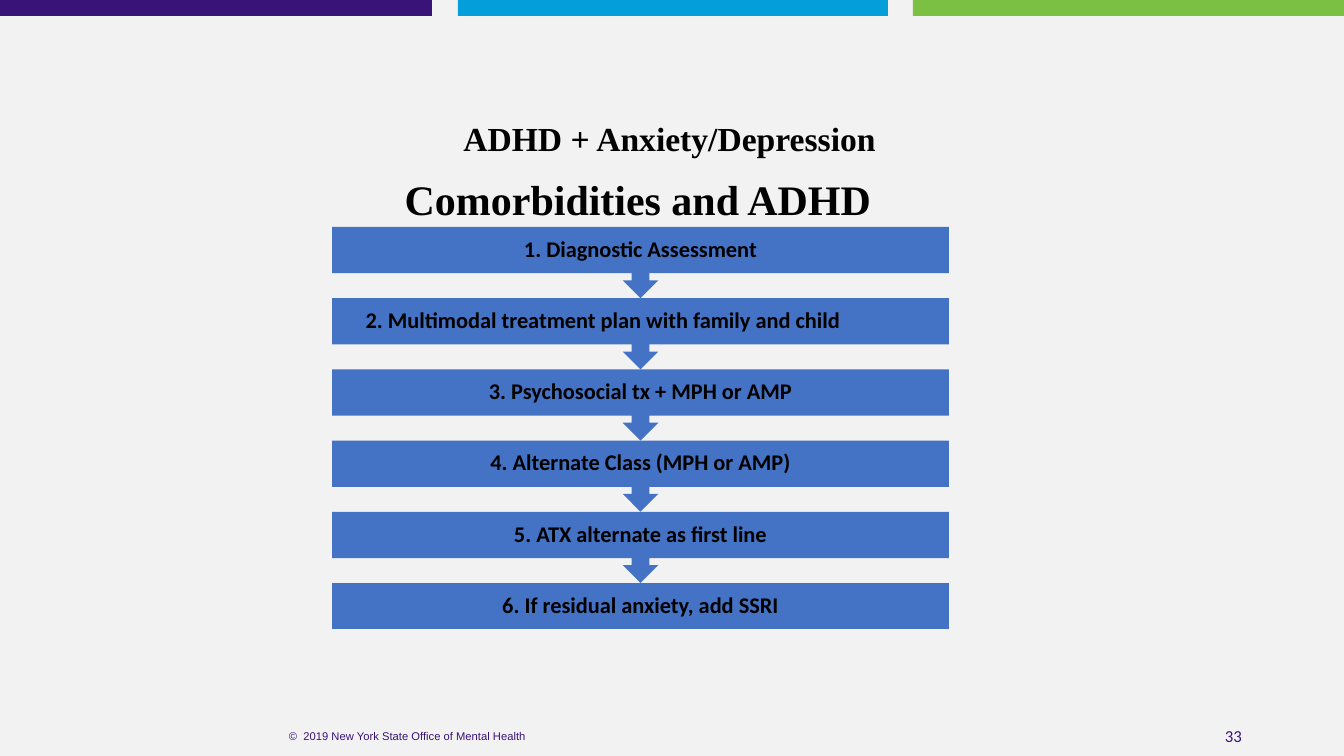
"""Build the ADHD with anxiety or depression treatment steps slide."""
import pptx
import pptx.dml.color
import pptx.enum.shapes
import pptx.enum.text
import pptx.util

STEPS = [
    "1. Diagnostic Assessment",
    "2. Multimodal treatment plan with family and child",
    "3. Psychosocial tx + MPH or AMP",
    "4. Alternate Class (MPH or AMP)",
    "5. ATX alternate as first line",
    "6. If residual anxiety, add SSRI",
]
TITLE = "ADHD + Anxiety/Depression"
HEAD = "Comorbidities and ADHD"
FOOT = "©  2019 New York State Office of Mental Health"
PAGE = "33"

THEME = {
    "back": "F2F2F2",
    "step": "4472C4",
    "bars": ["391378", "049FDA", "7BBF43"],
    "title": {"name": "Times New Roman", "size": 24, "bold": True, "color": "000000"},
    "head": {"name": "Times New Roman", "size": 30, "bold": True, "color": "000000"},
    "body": {"name": "Calibri", "size": 16, "bold": True, "color": "000000"},
    "foot": {"name": "Arial", "size": 8, "bold": False, "color": "391378"},
    "page": {"name": "Calibri", "size": 12, "bold": False, "color": "391378"},
}
BARS = [(0, 432), (458, 430), (913, 431)]
BAR_H = 16
LEFT, WIDE, FIRST, LAST, BOX_H = 332, 617, 227, 583, 46
PAD = (12, 12, 12, 12)
SHIFTS = {1: (12, 12, 87, 12)}

KIND = pptx.enum.shapes.MSO_SHAPE
ALIGN = pptx.enum.text.PP_ALIGN
ANCHOR = pptx.enum.text.MSO_ANCHOR


def px(n):
    return round(n * 914400 / 100.8)


def rgb(code):
    return pptx.dml.color.RGBColor.from_string(code)


def write(shape, text, style, align=ALIGN.CENTER, anchor=ANCHOR.MIDDLE,
          pad=(10, 5, 10, 5), lead=1.0):
    frame = shape.text_frame
    frame.text = text
    sides = ("margin_left", "margin_top", "margin_right", "margin_bottom")
    look = dict(zip(sides, map(px, pad)), word_wrap=True, vertical_anchor=anchor,
                auto_size=pptx.enum.text.MSO_AUTO_SIZE.NONE)
    for key, value in look.items():
        setattr(frame, key, value)
    line = frame.paragraphs[0]
    line.alignment, line.line_spacing = align, lead
    font = line.runs[0].font
    for key, value in {**THEME[style], "size": pptx.util.Pt(THEME[style]["size"])}.items():
        if key == "color":
            font.color.rgb = rgb(value)
        else:
            setattr(font, key, value)


def block(slide, kind, at, fill):
    shape = slide.shapes.add_shape(kind, *map(px, at))
    shape.shadow.inherit = False
    shape.fill.solid()
    shape.fill.fore_color.rgb = rgb(fill)
    shape.line.fill.background()
    return shape


def label(slide, at, text, style, **look):
    write(slide.shapes.add_textbox(*map(px, at)), text, style, **look)


def main():
    deck = pptx.Presentation()
    deck.slide_width, deck.slide_height = px(1344), px(756)
    slide = deck.slides.add_slide(deck.slide_layouts[5])
    slide.background.fill.solid()
    slide.background.fill.fore_color.rgb = rgb(THEME["back"])

    for (left, wide), fill in zip(BARS, THEME["bars"]):
        block(slide, KIND.RECTANGLE, (left, 0, wide, BAR_H), fill)
    label(slide, (950, 716, 302, 40), PAGE, "page", align=ALIGN.RIGHT)
    label(slide, (182, 716, 451, 40), FOOT, "foot")

    end = len(STEPS) - 1
    pitch = (LAST - FIRST) / end
    for i, text in enumerate(STEPS):
        kind, high = (KIND.DOWN_ARROW_CALLOUT, pitch) if i < end else (KIND.RECTANGLE, BOX_H)
        step = block(slide, kind, (LEFT, FIRST + i * pitch, WIDE, high), THEME["step"])
        write(step, text, "body", pad=SHIFTS.get(i, PAD), lead=0.9)

    title = slide.shapes.title
    title.left, title.top, title.width, title.height = map(px, (90, 102, 1159, 78))
    write(title, TITLE, "title", lead=0.9)
    label(slide, (306, 133, 643, 95), HEAD, "head", anchor=ANCHOR.BOTTOM, pad=(28, 4, 7, 4))
    deck.save("out.pptx")


if __name__ == "__main__":
    main()
